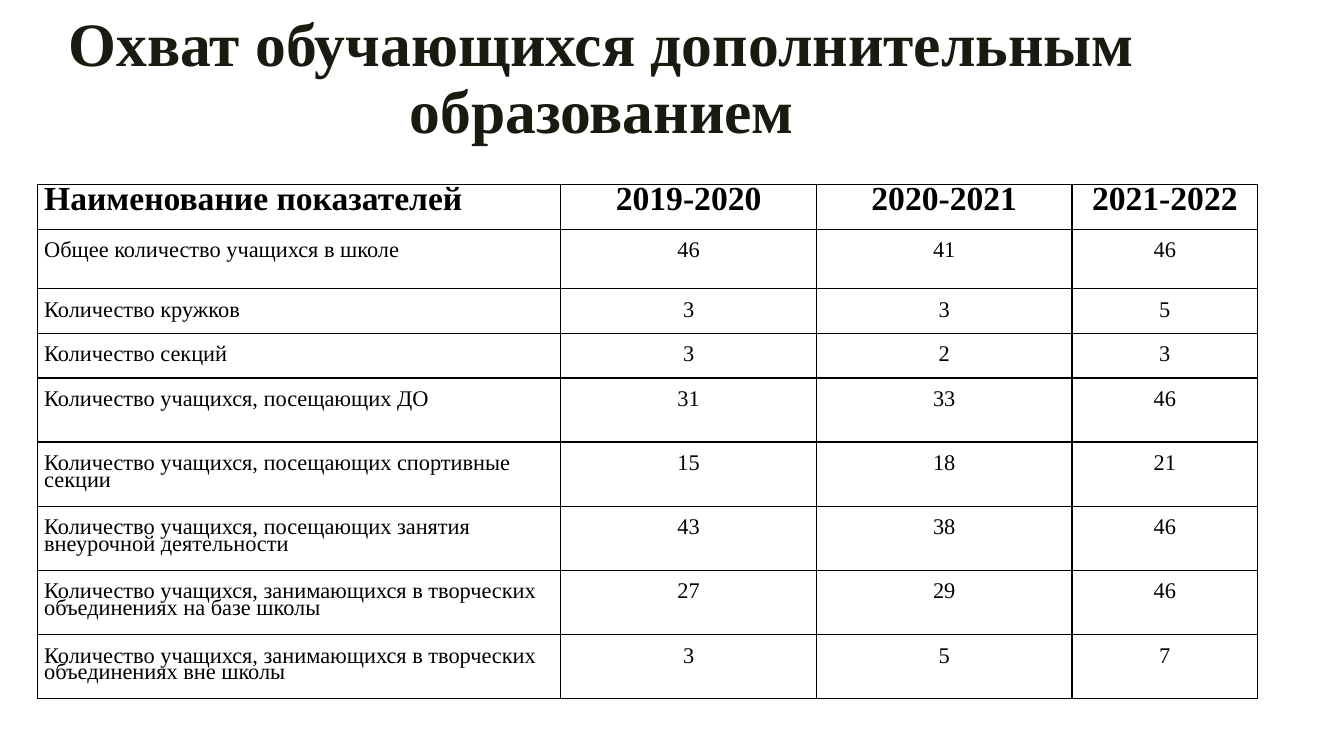
import pptx
import pptx.util
import pptx.dml.color
import pptx.enum.text
import pptx.oxml
import pptx.oxml.ns

Pt = pptx.util.Pt
ALIGN = pptx.enum.text.PP_ALIGN
FONT = "Times New Roman"
BLACK = pptx.dml.color.RGBColor(0x00, 0x00, 0x00)
TITLE_COLOR = pptx.dml.color.RGBColor(0x1B, 0x1A, 0x10)

TITLE = "Охват обучающихся дополнительным образованием"
ROWS = [
    ("Наименование показателей", "2019-2020", "2020-2021", "2021-2022"),
    ("Общее количество учащихся в школе", 46, 41, 46),
    ("Количество кружков", 3, 3, 5),
    ("Количество секций", 3, 2, 3),
    ("Количество учащихся, посещающих ДО", 31, 33, 46),
    ("Количество учащихся, посещающих спортивные секции", 15, 18, 21),
    ("Количество учащихся, посещающих занятия внеурочной деятельности", 43, 38, 46),
    ("Количество учащихся, занимающихся в творческих объединениях на базе школы", 27, 29, 46),
    ("Количество учащихся, занимающихся в творческих объединениях вне школы", 3, 5, 7),
]
COLUMN_SHARES = [374, 182.6, 182.6, 132.6]
ROW_SHARES = [32, 42.4, 32, 32] + [45.8] * 5


def style_paragraph(p, size, bold, color, align, spacing):
    p.alignment = align
    p.line_spacing = spacing
    p.font.name = FONT
    p.font.size = Pt(size)
    p.font.bold = bold
    p.font.color.rgb = color


def add_title(slide, left, top, width, height):
    tf = slide.shapes.add_textbox(Pt(left), Pt(top), Pt(width), Pt(height)).text_frame
    tf.word_wrap = True
    tf.vertical_anchor = pptx.enum.text.MSO_ANCHOR.MIDDLE
    p = tf.paragraphs[0]
    p.text = TITLE
    style_paragraph(p, 44, True, TITLE_COLOR, ALIGN.CENTER, 0.9)


def add_borders(cell):
    """Draw a thin black line on all four sides of the cell."""
    tc_pr = cell._tc.get_or_add_tcPr()
    for i, side in enumerate(("lnL", "lnR", "lnT", "lnB")):
        tc_pr.insert(i, pptx.oxml.parse_xml(
            f'<a:{side} {pptx.oxml.ns.nsdecls("a")} w="{Pt(1)}"><a:solidFill>'
            f'<a:srgbClr val="{BLACK}"/></a:solidFill></a:{side}>'))


def fill_cell(cell, value, is_header, is_label):
    cell.fill.background()
    add_borders(cell)
    cell.margin_left = cell.margin_right = Pt(5)
    cell.margin_top, cell.margin_bottom = Pt(12), 0
    p = cell.text_frame.paragraphs[0]
    p.text = str(value)
    style_paragraph(p, 24 if is_header else 16, is_header, BLACK,
                    ALIGN.LEFT if is_label else ALIGN.CENTER, Pt(12))


def add_indicator_table(slide, left, top, width, height):
    table = slide.shapes.add_table(len(ROWS), len(COLUMN_SHARES), Pt(left), Pt(top),
                                   Pt(width), Pt(height)).table
    table.first_row = table.horz_banding = False
    for column, share in zip(table.columns, COLUMN_SHARES):
        column.width = Pt(width * share / sum(COLUMN_SHARES))
    for row, share in zip(table.rows, ROW_SHARES):
        row.height = Pt(height * share / sum(ROW_SHARES))
    for r, values in enumerate(ROWS):
        for c, value in enumerate(values):
            fill_cell(table.cell(r, c), value, r == 0, c == 0)


def main():
    prs = pptx.Presentation()
    prs.slide_width, prs.slide_height = Pt(960), Pt(540)
    slide = prs.slides.add_slide(prs.slide_layouts[6])
    add_title(slide, 23, 5, 814, 104.4)
    add_indicator_table(slide, 26.6, 131.7, 871.8, 367.4)
    prs.save("out.pptx")


if __name__ == "__main__":
    main()
